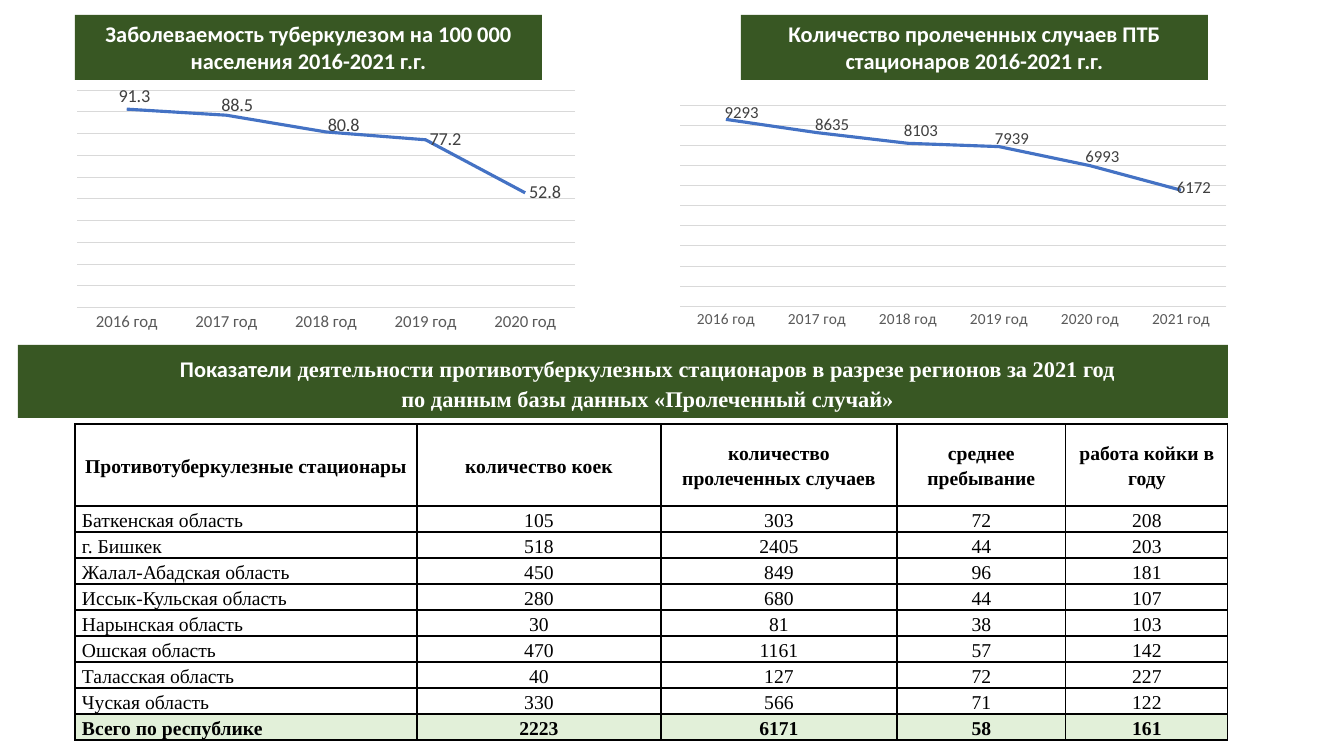
"""Builds the slide on tuberculosis incidence and hospital activity by region."""
from lxml import etree
from pptx import Presentation
from pptx import util as u
from pptx.chart import data
from pptx.dml.color import RGBColor
from pptx.enum import chart as ch, shapes, text
from pptx.oxml import ns

SCALE = 914400 / 100.8


def px(*lengths):
    return [u.Emu(round(length * SCALE)) for length in lengths]


def style(font, size, color, name="Calibri", bold=False):
    for key, value in {"size": u.Pt(size), "name": name, "bold": bold}.items():
        setattr(font, key, value)
    font.color.rgb = RGBColor.from_string(color)


deck = Presentation()
deck.slide_width, deck.slide_height = px(1344, 756)
slide = deck.slides.add_slide(deck.slide_layouts[6])

regions = [
    ("Противотуберкулезные стационары", "количество коек", "количество пролеченных случаев",
     "среднее пребывание", "работа койки в году"),
    ("Баткенская область", 105, 303, 72, 208),
    ("г. Бишкек", 518, 2405, 44, 203),
    ("Жалал-Абадская область", 450, 849, 96, 181),
    ("Иссык-Кульская область", 280, 680, 44, 107),
    ("Нарынская область", 30, 81, 38, 103),
    ("Ошская область", 470, 1161, 57, 142),
    ("Таласская область", 40, 127, 72, 227),
    ("Чуская область", 330, 566, 71, 122),
    ("Всего по республике", 2223, 6171, 58, 161),
]
last = len(regions) - 1
table = slide.shapes.add_table(len(regions), 5, *px(75, 424, 1153, 316)).table
for column, width in zip(table.columns, px(342, 244, 236, 169, 162)):
    column.width = width
for r, region in enumerate(regions):
    table.rows[r].height = px(26 if r else 82)[0]
    for c, value in enumerate(region):
        cell = table.cell(r, c)
        margins = dict(zip(("margin_left", "margin_top", "margin_right", "margin_bottom"),
                           px(7, 0, 7, 0)))
        anchor = text.MSO_ANCHOR.BOTTOM if r else text.MSO_ANCHOR.MIDDLE
        for key, setting in {**margins, "vertical_anchor": anchor}.items():
            setattr(cell, key, setting)
        cell.text = str(value)
        line = cell.text_frame.paragraphs[0]
        line.line_spacing = 1.15
        line.alignment = text.PP_ALIGN.LEFT if r and c == 0 else text.PP_ALIGN.CENTER
        style(line.runs[0].font, 14, "000000", "Times New Roman", r in (0, last))
        properties = cell._tc.get_or_add_tcPr()
        for side in ("lnL", "lnR", "lnT", "lnB"):
            border = etree.SubElement(properties, ns.qn(f"a:{side}"), w=str(u.Pt(1)))
            fill = etree.SubElement(border, ns.qn("a:solidFill"))
            etree.SubElement(fill, ns.qn("a:srgbClr"), val="000000")
        if r == last:
            cell.fill.solid()
            cell.fill.fore_color.rgb = RGBColor.from_string("E2F0D9")
        else:
            cell.fill.background()

SERIF = "Times New Roman"
headings = [
    ((18, 345, 1210, 73), 49, 1.15, [
        [("Показатели", "Calibri"),
         (" деятельности противотуберкулезных стационаров в разрезе регионов за 2021 год", SERIF)],
        [("по данным базы данных «Пролеченный случай»", SERIF)]]),
    ((75, 15, 467, 65), 0, 1.0,
     [[("Заболеваемость туберкулезом на 100 000 населения 2016-2021 г.г.", "Calibri")]]),
    ((741, 15, 467, 65), 0, 1.0,
     [[("Количество пролеченных случаев ПТБ стационаров 2016-2021 г.г.", "Calibri")]]),
]
for box, indent, spacing, lines in headings:
    heading = slide.shapes.add_shape(shapes.MSO_SHAPE.RECTANGLE, *px(*box))
    heading.shadow.inherit = False
    heading.fill.solid()
    heading.fill.fore_color.rgb = RGBColor.from_string("385723")
    heading.line.fill.background()
    frame = heading.text_frame
    frame.word_wrap = True
    frame.vertical_anchor = text.MSO_ANCHOR.MIDDLE
    for i, runs in enumerate(lines):
        line = frame.add_paragraph() if i else frame.paragraphs[0]
        line.alignment = text.PP_ALIGN.CENTER
        line.line_spacing = spacing
        line._p.get_or_add_pPr().set("indent", str(px(indent)[0]))
        for words, typeface in runs:
            run = line.add_run()
            run.text = words
            style(run.font, 16, "FFFFFF", typeface, True)

trends = [
    {"box": (663, 82, 581, 258), "values": (9293, 8635, 8103, 7939, 6993, 5774),
     "plot": (0.03, 0.09, 0.94, 0.78), "top": 10000, "sizes": (11, 12),
     "shifts": ((-5, -7), (-6, -8), (-8, -13), (-8, -8), (-9, -9), (-8, -2)),
     "captions": {5: "6172"}},
    {"box": (61, 42, 530, 302), "values": (91.3, 88.5, 80.8, 77.2, 52.8),
     "plot": (0.03, 0.16, 0.94, 0.72), "top": 100, "sizes": (12, 13),
     "shifts": ((-12, -12), (-9, -9), (-2, -6)), "captions": {}},
]
for trend in trends:
    years = data.CategoryChartData()
    years.categories = [f"{2016 + i} год" for i in range(len(trend["values"]))]
    years.add_series("Series 1", trend["values"])
    chart = slide.shapes.add_chart(ch.XL_CHART_TYPE.LINE, *px(*trend["box"]), years).chart
    chart.has_legend = chart.has_title = False
    style(chart.font, 10, "000000")
    axis_size, label_size = trend["sizes"]

    year_axis, value_axis = chart.category_axis, chart.value_axis
    year_axis.major_tick_mark = ch.XL_TICK_MARK.NONE
    style(year_axis.tick_labels.font, axis_size, "595959")
    for key, value in {"minimum_scale": 0, "maximum_scale": trend["top"],
                       "major_unit": trend["top"] / 10, "visible": False,
                       "has_major_gridlines": True}.items():
        setattr(value_axis, key, value)
    series = chart.plots[0].series[0]
    series.smooth = False
    series.marker.style = ch.XL_MARKER_STYLE.NONE
    for stroke, color, weight in ((year_axis.format.line, "D9D9D9", 0.75),
                                  (value_axis.major_gridlines.format.line, "D9D9D9", 0.75),
                                  (series.format.line, "4472C4", 2.25)):
        stroke.color.rgb = RGBColor.from_string(color)
        stroke.width = u.Pt(weight)

    labels = series.data_labels
    labels.show_value = True
    labels.position = ch.XL_LABEL_POSITION.RIGHT
    style(labels.font, label_size, "404040")

    area = chart._chartSpace.chart.plotArea
    for old in area.findall(ns.qn("c:layout")):
        area.remove(old)
    layouts = [(area, 0, [("layoutTarget", "inner"), ("xMode", "edge"), ("yMode", "edge"),
                          *zip("xywh", trend["plot"])])]
    for i, (dx, dy) in enumerate(trend["shifts"]):
        label = series.points[i].data_label
        if i in trend["captions"]:
            caption = label.text_frame.paragraphs[0].add_run()
            caption.text = trend["captions"][i]
            style(caption.font, label_size, "404040")
        else:
            style(label.font, label_size, "404040")
        label.position = ch.XL_LABEL_POSITION.RIGHT
        width, height = trend["box"][2:]
        layouts.append((labels._element.findall(ns.qn("c:dLbl"))[i], 1,
                        [("x", round(dx / width, 3)), ("y", round(dy / height, 3))]))
    for parent, place, settings in layouts:
        layout = etree.Element(ns.qn("c:layout"))
        manual = etree.SubElement(layout, ns.qn("c:manualLayout"))
        for key, value in settings:
            etree.SubElement(manual, ns.qn(f"c:{key}"), val=str(value))
        parent.insert(place, layout)

deck.save("out.pptx")
